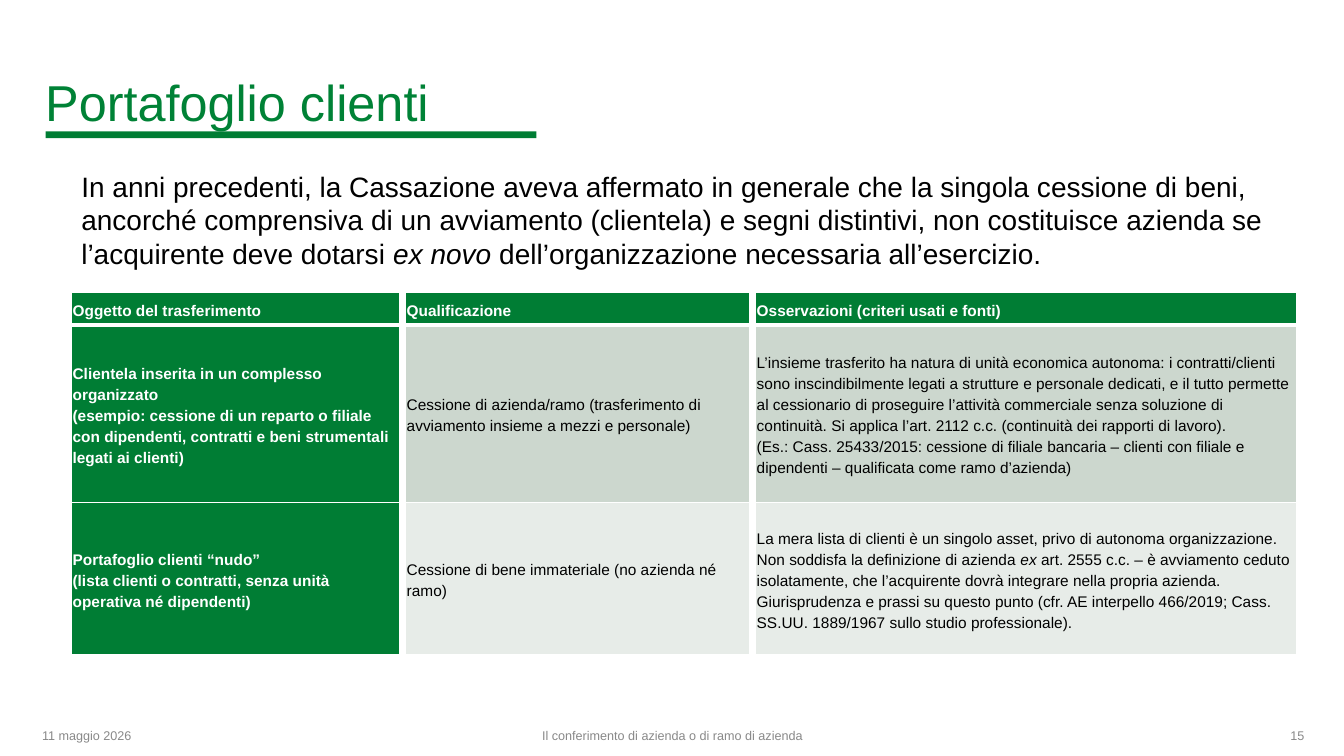
from lxml import etree
from pptx import Presentation
from pptx.dml.color import RGBColor
from pptx.enum.shapes import MSO_SHAPE
from pptx.enum.text import MSO_ANCHOR, PP_ALIGN
from pptx.oxml.ns import qn
from pptx.util import Cm, Pt

RECT = MSO_SHAPE.RECTANGLE
TOP, MIDDLE, BOTTOM = MSO_ANCHOR.TOP, MSO_ANCHOR.MIDDLE, MSO_ANCHOR.BOTTOM
LEFT, CENTER, RIGHT, JUST = (PP_ALIGN.LEFT, PP_ALIGN.CENTER,
                             PP_ALIGN.RIGHT, PP_ALIGN.JUSTIFY)
GREEN, TITLE, GRAY, WHITE, BLACK = "007D34", "008236", "898989", "FFFFFF", "000000"
SAGE, PALE = "CCD7CE", "E7ECE8"


def color(code):
    return RGBColor.from_string(code)


def apply(item, values):
    for name, value in values.items():
        setattr(item, name, value)


class Deck:
    font = "Arial"
    inset = Cm(0.03)
    cell_para = {"line_spacing": Pt(15), "space_after": Pt(12)}

    def __init__(self):
        self.prs = Presentation()
        apply(self.prs, {"slide_width": Cm(33.87), "slide_height": Cm(19.05)})
        self.slide = self.prs.slides.add_slide(self.prs.slide_layouts[6])

    def runs(self, para, parts, size, ink, bold=False):
        """Every second part is set in italics; a newline breaks the line."""
        for i, part in enumerate(parts):
            for j, line in enumerate(part.split("\n")):
                if j:
                    para.add_line_break()
                run = para.add_run()
                run.text = line
                apply(run.font, {"name": self.font, "size": Pt(size),
                                 "bold": bold, "italic": i % 2 == 1})
                run.font.color.rgb = color(ink)

    def text(self, box, parts, size, ink, anchor=TOP, align=LEFT):
        frame = self.slide.shapes.add_textbox(*map(Cm, box)).text_frame
        apply(frame, {"word_wrap": True, "vertical_anchor": anchor})
        para = frame.paragraphs[0]
        para.alignment = align
        self.runs(para, parts, size, ink)

    def bar(self, box, fill):
        shape = self.slide.shapes.add_shape(RECT, *map(Cm, box))
        shape.shadow.inherit = False
        shape.fill.solid()
        shape.fill.fore_color.rgb = color(fill)
        shape.line.fill.background()

    def edge(self, cell, side, width):
        props = cell._tc.get_or_add_tcPr()
        line = etree.SubElement(props, qn("a:" + side), w=str(Pt(width)))
        fill = etree.SubElement(line, qn("a:solidFill"))
        etree.SubElement(fill, qn("a:srgbClr"), val=WHITE)

    def cell(self, cell, parts, fill, head, bold):
        apply(cell, {"margin_left": self.inset, "margin_right": self.inset,
                     "margin_top": self.inset, "margin_bottom": self.inset,
                     "vertical_anchor": MIDDLE})
        for side in ("lnL", "lnR", "lnT", "lnB"):
            self.edge(cell, side, 3 if head and side == "lnB" else 1)
        para = cell.text_frame.paragraphs[0]
        apply(para, self.cell_para)
        para.alignment = JUST if head else LEFT
        if parts:
            cell.fill.solid()
            cell.fill.fore_color.rgb = color(fill)
            self.runs(para, parts, 11, WHITE if bold else BLACK, bold)
        else:
            cell.fill.background()

    def table(self, left, top, cols, rows, data, fills):
        table = self.slide.shapes.add_table(
            len(rows), len(cols), Cm(left), Cm(top),
            Cm(sum(cols)), Cm(sum(rows))).table
        apply(table, {"first_row": False, "horz_banding": False})
        for col, width in zip(table.columns, cols):
            col.width = Cm(width)
        for row, height in zip(table.rows, rows):
            row.height = Cm(height)
        for r in range(len(rows)):
            for c in range(len(cols)):
                # Odd columns are narrow gaps
                parts = [] if c % 2 else data[r][c // 2]
                bold = r == 0 or c == 0
                self.cell(table.cell(r, c), parts,
                          GREEN if bold else fills[r], r == 0, bold)


def main():
    deck = Deck()

    # Title and rule
    deck.bar((1.15, 3.31, 12.37, 0.17), GREEN)
    deck.text((0.89, 0.86, 32.64, 2.57), ["Portafoglio clienti"], 36, TITLE, BOTTOM)

    # Introduction
    deck.text((1.8, 4.14, 31.72, 3), [
        "In anni precedenti, la Cassazione aveva affermato in generale che la "
        "singola cessione di beni, ancorché comprensiva di un avviamento "
        "(clientela) e segni distintivi, non costituisce azienda se "
        "l’acquirente deve dotarsi ",
        "ex novo",
        " dell’organizzazione necessaria all’esercizio."], 20, BLACK)

    # Comparison table
    data = [
        [["Oggetto del trasferimento"], ["Qualificazione"],
         ["Osservazioni (criteri usati e fonti)"]],
        [["Clientela inserita in un complesso organizzato\n(esempio: cessione "
          "di un reparto o filiale con dipendenti, contratti e beni "
          "strumentali legati ai clienti)"],
         ["Cessione di azienda/ramo (trasferimento di avviamento insieme a "
          "mezzi e personale)"],
         ["L’insieme trasferito ha natura di unità economica autonoma: i "
          "contratti/clienti sono inscindibilmente legati a strutture e "
          "personale dedicati, e il tutto permette al cessionario di "
          "proseguire l’attività commerciale senza soluzione di continuità. "
          "Si applica l’art. 2112 c.c. (continuità dei rapporti di lavoro).\n"
          "(Es.: Cass. 25433/2015: cessione di filiale bancaria – clienti con "
          "filiale e dipendenti – qualificata come ramo d’azienda)"]],
        [["Portafoglio clienti “nudo”\n(lista clienti o contratti, senza "
          "unità operativa né dipendenti)"],
         ["Cessione di bene immateriale (no azienda né ramo)"],
         ["La mera lista di clienti è un singolo asset, privo di autonoma "
          "organizzazione. Non soddisfa la definizione di azienda ",
          "ex",
          " art. 2555 c.c. – è avviamento ceduto isolatamente, che "
          "l’acquirente dovrà integrare nella propria azienda. Giurisprudenza "
          "e prassi su questo punto (cfr. AE interpello 466/2019; Cass. SS.UU. "
          "1889/1967 sullo studio professionale)."]],
    ]
    deck.table(1.8, 7.37, [8.26, 0.13, 8.66, 0.13, 13.64], [0.66, 4.47, 3.84],
               data, [GREEN, SAGE, PALE])

    # Footer
    for left, width, words, align in (
            (0.81, 7.62, "11 maggio 2026", LEFT),
            (11.23, 11.43, "Il conferimento di azienda o di ramo di azienda", CENTER),
            (25.5, 7.62, "15", RIGHT)):
        deck.text((left, 18.03, width, 1.02), [words], 9, GRAY, MIDDLE, align)

    deck.prs.save("out.pptx")


if __name__ == "__main__":
    main()
